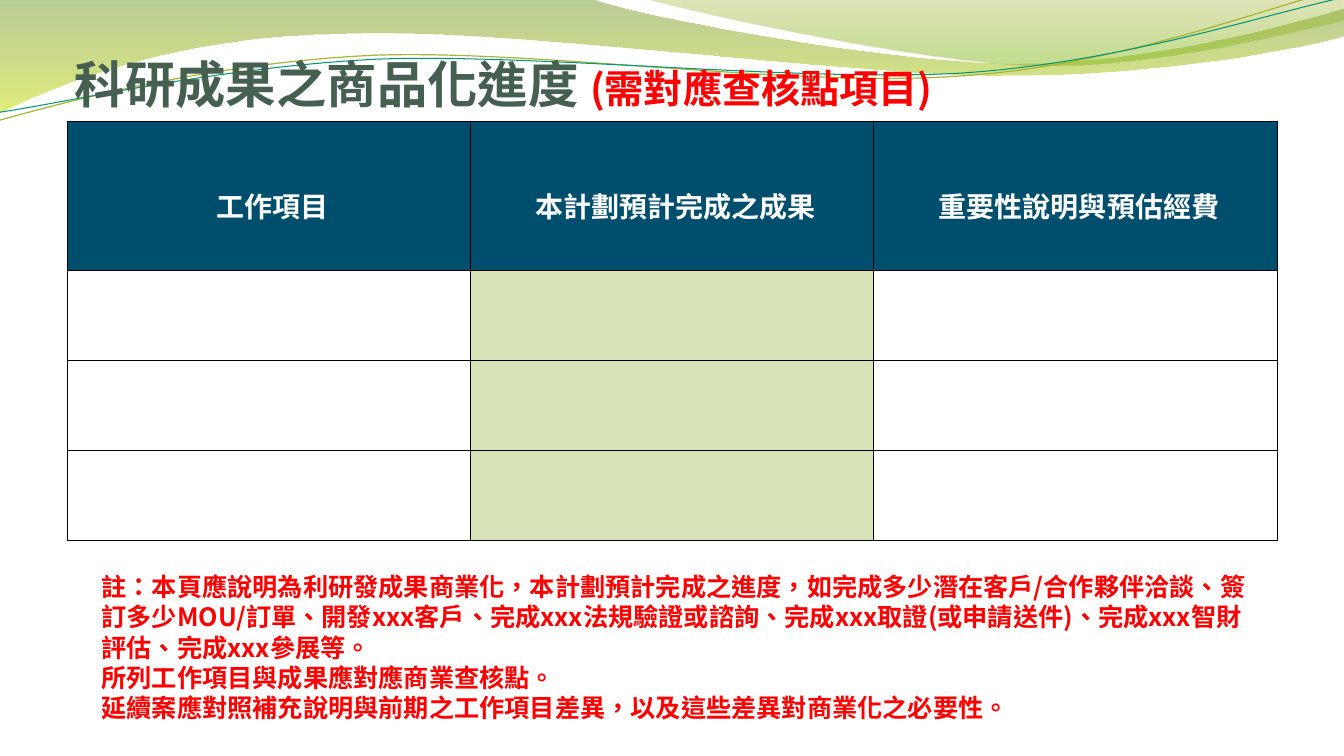
from dataclasses import dataclass

from pptx import Presentation
from pptx import util as u
from pptx.dml.color import RGBColor
from pptx.enum import text
from pptx.oxml import parse_xml
from pptx.oxml.ns import nsdecls, qn
from pptx.util import Inches
from lxml import etree

Point = tuple[float, float]
SC, TC = "Noto Sans CJK SC", "Noto Sans CJK TC"
RED, WHITE, NAVY, GREEN = "FF0000", "FFFFFF", "004E6E", "D8E4B7"


@dataclass
class Stop:
    position: float
    color: str
    alpha: int


@dataclass
class Wave:
    """Segments hold one point (line) or three points (Bezier curve)."""
    start: Point
    segments: list[list[Point]]
    stops: tuple[Stop, ...] = ()
    line: str = ""
    width: float = 0
    rotation: float = 0


WAVES = [
    Wave((0, 0), [
        [(5.87, -0.01)],
        [(6.34, 0.17), (8.84, 0.63), (10.11, 0.63)],
        [(11.37, 0.63), (12.77, 0.26), (13.33, 0.09)],
        [(13.34, 0.36)],
        [(13.11, 0.44), (11.59, 0.76), (9.94, 0.75)],
        [(8.29, 0.75), (5.09, 0.28), (3.43, 0.34)],
        [(1.72, 0.36), (0.61, 0.83), (-0.02, 1.13)],
    ], stops=(Stop(0, "668F1B", 45), Stop(1, "CAE00E", 55))),
    Wave((6.38, -0.01), [
        [(6.79, 0.11), (9.09, 0.62), (10.25, 0.65)],
        [(11.4, 0.69), (12.82, 0.32), (13.33, 0.21)],
        [(13.33, 0)],
    ], stops=(Stop(0, "99A719", 30), Stop(0.8, "80B814", 45))),
    Wave((-0.03, 0.88), [
        [(0.62, 0.73), (2.1, 0.41), (3.69, 0.41)],
        [(5.28, 0.42), (7.87, 0.93), (9.48, 0.89)],
        [(11.09, 0.87), (12.53, 0.36), (13.32, 0.21)],
    ], line="A8B532", width=0.85, rotation=357.3),
    Wave((-0.03, 0.8), [
        [(0.61, 0.74), (2.18, 0.45), (3.77, 0.45)],
        [(5.37, 0.47), (7.95, 0.88), (9.54, 0.86)],
        [(11.13, 0.83), (12.56, 0.42), (13.35, 0.29)],
    ], line="029676", width=0.75, rotation=357.3),
]

HEADERS = ["工作項目", "本計劃預計完成之成果", "重要性說明與預估經費"]
HEADER_FILLS, BODY_FILLS = [NAVY] * 3, [WHITE, GREEN, WHITE]
TABLE_HEIGHT, HEADER_HEIGHT, BODY_ROWS = 4.16, 1.48, 3
NOTES = [
    "註：本頁應說明為利研發成果商業化，本計劃預計完成之進度，如完成多少潛在客戶/合作夥伴洽談、"
    "簽訂多少MOU/訂單、開發xxx客戶、完成xxx法規驗證或諮詢、完成xxx取證(或申請送件)、"
    "完成xxx智財評估、完成xxx參展等。",
    "所列工作項目與成果應對應商業查核點。",
    "延續案應對照補充說明與前期之工作項目差異，以及這些差異對商業化之必要性。",
]


def rgb(color: str) -> RGBColor:
    return RGBColor.from_string(color)


def set_font(font, size: float, name: str, color: str) -> None:
    font.size, font.name, font.bold = u.Pt(size), name, True
    font.color.rgb = rgb(color)
    east_asian = etree.Element(qn("a:ea"), typeface=name)
    font._element.find(qn("a:latin")).addnext(east_asian)


def set_language(para) -> None:
    for span in para.runs:
        span._r.get_or_add_rPr().set("lang", "zh-TW")


def set_margins(frame, left: float, top: float, right: float, bottom: float) -> None:
    frame.margin_left, frame.margin_top = Inches(left), Inches(top)
    frame.margin_right, frame.margin_bottom = Inches(right), Inches(bottom)


def indent(para) -> None:
    para.line_spacing = 1.5
    properties = para._p.get_or_add_pPr()
    properties.set("marL", str(Inches(0.07)))
    properties.set("indent", "0")


def bend(shape, wave: Wave) -> None:
    """Turn each run of three straight steps into one Bezier curve."""
    steps = iter(list(shape._element.iter(qn("a:lnTo"))))
    for segment in wave.segments:
        first, *others = [next(steps) for _ in segment]
        if others:
            first.tag = qn("a:cubicBezTo")
            for step in others:
                first.append(step[0])
                step.getparent().remove(step)


def draw_wave(page, wave: Wave) -> None:
    points = [(Inches(x), Inches(y)) for segment in wave.segments for x, y in segment]
    builder = page.shapes.build_freeform(Inches(wave.start[0]), Inches(wave.start[1]))
    builder.add_line_segments(points, close=False)
    shape = builder.convert_to_shape()
    bend(shape, wave)
    shape.shadow.inherit = False
    shape.rotation = wave.rotation
    if not wave.stops:
        shape.fill.background()
        shape.line.color.rgb = rgb(wave.line)
        shape.line.width = u.Pt(wave.width)
        return
    etree.SubElement(next(shape._element.iter(qn("a:path"))), qn("a:close"))
    shape.line.fill.background()
    shape.fill.gradient()
    shape.fill.gradient_angle = 270
    for target, stop in zip(shape.fill.gradient_stops, wave.stops):
        target.position = stop.position
        target.color.rgb = rgb(stop.color)
    for element, stop in zip(shape._element.iter(qn("a:srgbClr")), wave.stops):
        etree.SubElement(element, qn("a:alpha"), val=str(stop.alpha * 1000))


def format_cell(cell, color: str) -> None:
    properties = cell._tc.get_or_add_tcPr()
    for side in ("lnL", "lnR", "lnT", "lnB"):
        properties.append(parse_xml(
            f'<a:{side} {nsdecls("a")} w="{u.Pt(0.75)}"><a:solidFill>'
            f'<a:srgbClr val="000000"/></a:solidFill></a:{side}>'))
    cell.fill.solid()
    cell.fill.fore_color.rgb = rgb(color)


def add_title(page) -> None:
    title = page.shapes.title
    page.shapes._spTree.append(title._element)  # in front of the waves
    title.left, title.top = Inches(0.67), Inches(0.36)
    title.width, title.height = Inches(12), Inches(0.58)
    frame = title.text_frame
    frame.auto_size = text.MSO_AUTO_SIZE.NONE
    frame.vertical_anchor = text.MSO_ANCHOR.MIDDLE
    set_margins(frame, 0, 0.05, 0, 0)
    para = frame.paragraphs[0]
    para.alignment = text.PP_ALIGN.LEFT
    indent(para)
    for words, size, name, color in (("科研成果之商品化進度 ", 36, TC, "455F51"),
                                     ("(需對應查核點項目)", 28, SC, RED)):
        span = para.add_run()
        span.text = words
        set_font(span.font, size, name, color)
    set_language(para)


def add_progress_table(page) -> None:
    body_height = (TABLE_HEIGHT - HEADER_HEIGHT) / BODY_ROWS
    table = page.shapes.add_table(1 + BODY_ROWS, len(HEADERS), Inches(0.67), Inches(1.2),
                                  Inches(12), Inches(TABLE_HEIGHT)).table
    for number, row in enumerate(table.rows):
        row.height = Inches(body_height if number else HEADER_HEIGHT)
        for cell, color in zip(row.cells, BODY_FILLS if number else HEADER_FILLS):
            format_cell(cell, color)
    for column, words in enumerate(HEADERS):
        cell = table.cell(0, column)
        cell.text = words
        cell.vertical_anchor = text.MSO_ANCHOR.MIDDLE
        side = 0.05 if column == 1 else 0
        set_margins(cell, side, 0, side, 0)
        para = cell.text_frame.paragraphs[0]
        para.alignment = text.PP_ALIGN.CENTER
        indent(para)
        set_font(para.font, 20, SC, WHITE)
        set_language(para)


def add_notes(page) -> None:
    box = page.shapes.add_textbox(Inches(0.91), Inches(5.62), Inches(11.56), Inches(1.62))
    frame = box.text_frame
    frame.word_wrap = True
    frame.auto_size = text.MSO_AUTO_SIZE.SHAPE_TO_FIT_TEXT
    frame.text = "\n".join(NOTES)
    for para in frame.paragraphs:
        set_font(para.font, 18, SC, RED)
        set_language(para)


def main() -> None:
    deck = Presentation()
    deck.slide_width, deck.slide_height = Inches(40 / 3), Inches(7.5)
    page = deck.slides.add_slide(deck.slide_layouts[5])
    # Background waves
    for wave in WAVES:
        draw_wave(page, wave)
    # Content
    add_progress_table(page)
    add_title(page)
    add_notes(page)
    deck.save("out.pptx")


if __name__ == "__main__":
    main()
